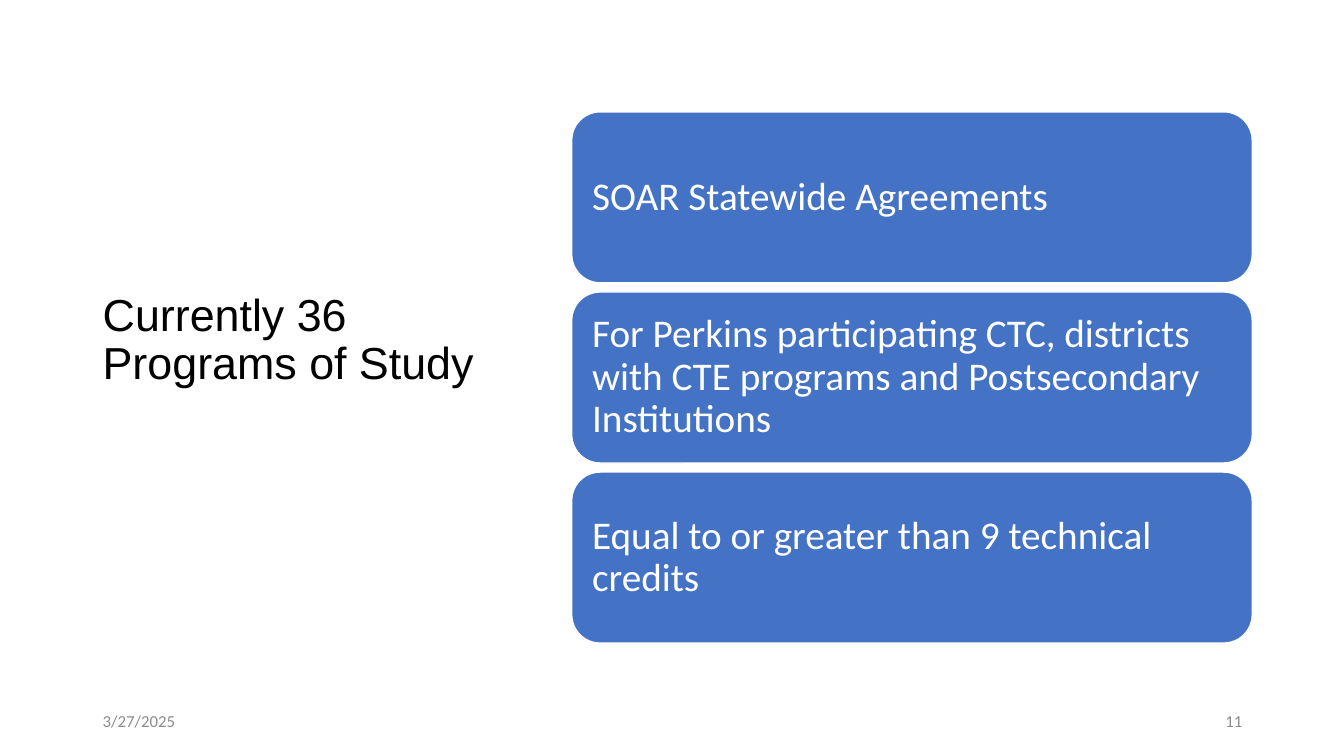
import pptx
import pptx.dml.color
import pptx.enum.shapes
import pptx.enum.text
import pptx.util

Inches = pptx.util.Inches
Pt = pptx.util.Pt
ANCHOR = pptx.enum.text.MSO_ANCHOR
ALIGN = pptx.enum.text.PP_ALIGN

COLORS = {"title": "000000", "footer": "8C8C8C", "card": "4472C4", "white": "FFFFFF"}
CARDS = [
    "SOAR Statewide Agreements",
    "For Perkins participating CTC, districts with CTE programs and Postsecondary Institutions",
    "Equal to or greater than 9 technical credits",
]


def rgb(name):
    return pptx.dml.color.RGBColor.from_string(COLORS[name])


def write(sp, text, size, color, font="Calibri", anchor=ANCHOR.MIDDLE,
          align=ALIGN.LEFT, spacing=1.0, inset=None):
    tf = sp.text_frame
    tf.word_wrap = True
    tf.vertical_anchor = anchor
    if inset is not None:
        tf.margin_left = tf.margin_right = Inches(inset)
        tf.margin_top = tf.margin_bottom = Inches(inset)
    p = tf.paragraphs[0]
    p.alignment = align
    p.line_spacing = spacing
    r = p.add_run()
    r.text = text
    r.font.name = font
    r.font.size = Pt(size)
    r.font.color.rgb = rgb(color)


def add_text(s, box, text, **fmt):
    sp = s.shapes.add_textbox(*map(Inches, box))
    write(sp, text, **fmt)


def add_title(s, box):
    add_text(s, box, "Currently 36 Programs of Study", size=32, color="title",
             font="Arial", anchor=ANCHOR.BOTTOM, spacing=0.9)


def add_cards(s, box, gap):
    left, top, width, height = box
    card_height = (height - gap * (len(CARDS) - 1)) / len(CARDS)
    for i, text in enumerate(CARDS):
        y = top + i * (card_height + gap)
        sp = s.shapes.add_shape(pptx.enum.shapes.MSO_SHAPE.ROUNDED_RECTANGLE,
                                Inches(left), Inches(y), Inches(width), Inches(card_height))
        sp.shadow.inherit = False
        sp.fill.solid()
        sp.fill.fore_color.rgb = rgb("card")
        sp.line.color.rgb = rgb("white")
        sp.line.width = Pt(1)
        write(sp, text, size=28, color="white", spacing=0.9, inset=0.12)


def add_footer(s, box):
    left, top, width, height = box
    part = 3
    add_text(s, (left, top, part, height), "3/27/2025", size=12, color="footer")
    add_text(s, (left + width - part, top, part, height), "11", size=12,
             color="footer", align=ALIGN.RIGHT)


def main():
    prs = pptx.Presentation()
    prs.slide_width = Inches(13.33)
    prs.slide_height = Inches(7.5)
    s = prs.slides.add_slide(prs.slide_layouts[6])
    add_title(s, (0.92, 0.5, 4.3, 3.41))
    add_footer(s, (0.92, 6.95, 11.5, 0.4))
    add_cards(s, (5.67, 1.11, 6.75, 5.27), gap=0.09)
    prs.save("out.pptx")


if __name__ == "__main__":
    main()
